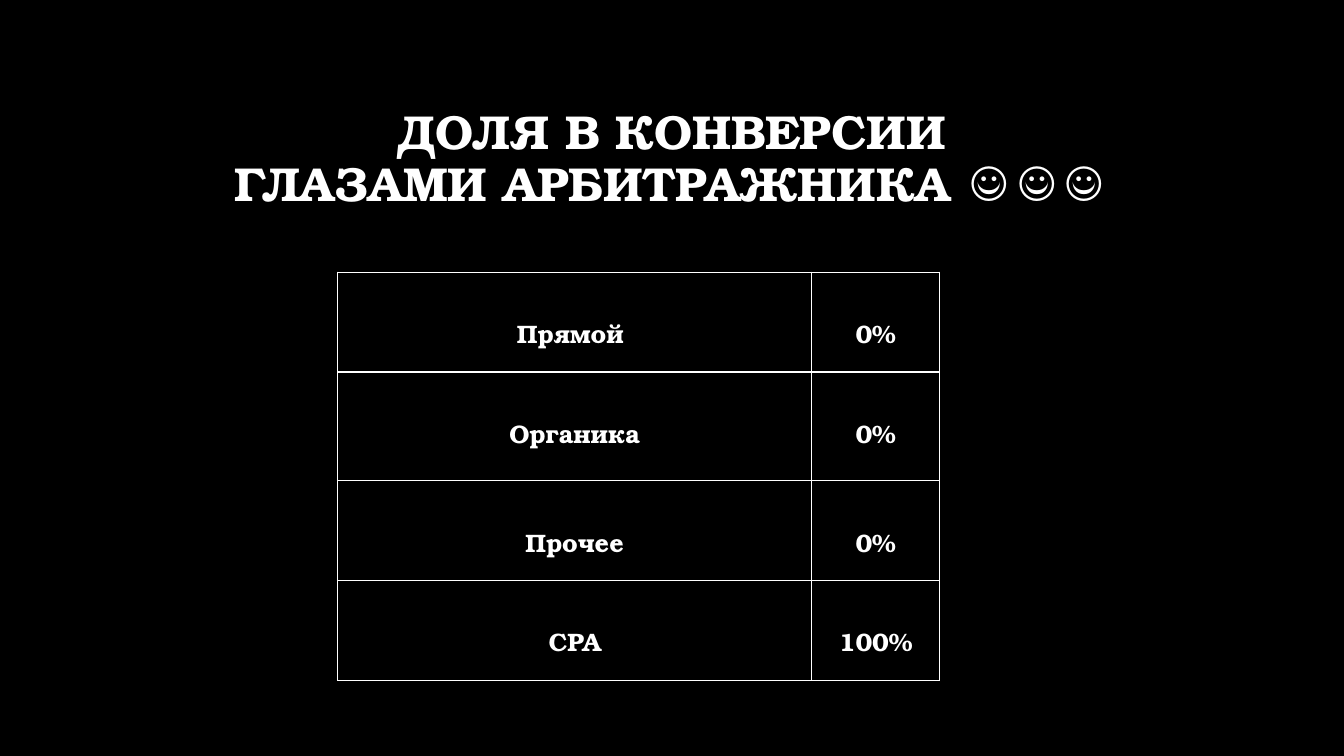
from lxml import etree
from pptx import Presentation
from pptx.dml.color import RGBColor
from pptx.enum.text import MSO_ANCHOR, MSO_AUTO_SIZE, PP_ALIGN
from pptx.oxml.ns import qn
from pptx.util import Inches, Pt

COLORS = {"background": "000000", "text": "FFFFFF", "border": "FFFFFF"}
FONT = "TeX Gyre Bonum"
TITLE = "ДОЛЯ В КОНВЕРСИИ\vГЛАЗАМИ АРБИТРАЖНИКА ☺☺☺"
SHARES = [("Прямой ", "0%"), ("Органика", "0%"), ("Прочее", "0%"), ("CPA", "100%")]
COL_WIDTHS = [4.7, 1.27]
ROW_HEIGHTS = [0.99, 1.08, 0.99, 0.99]


def rgb(name):
    return RGBColor.from_string(COLORS[name])


def style_paragraph(p, size):
    p.alignment = PP_ALIGN.CENTER
    p.font.name = FONT
    p.font.size = Pt(size)
    p.font.bold = True
    p.font.color.rgb = rgb("text")


def add_title(s):
    sp = s.shapes.title
    sp.left, sp.top = Inches(1.34), Inches(0.72)
    sp.width, sp.height = Inches(10.64), Inches(1.43)
    tf = sp.text_frame
    tf.text = TITLE
    tf.word_wrap = True
    tf.auto_size = MSO_AUTO_SIZE.NONE
    tf.vertical_anchor = MSO_ANCHOR.BOTTOM
    p = tf.paragraphs[0]
    style_paragraph(p, 34)
    p.line_spacing = 0.9


def set_borders(cell):
    tc_pr = cell._tc.get_or_add_tcPr()
    for i, side in enumerate(("a:lnL", "a:lnR", "a:lnT", "a:lnB")):
        ln = etree.Element(qn(side), w=str(Pt(1)))
        fill = etree.SubElement(ln, qn("a:solidFill"))
        etree.SubElement(fill, qn("a:srgbClr"), val=COLORS["border"])
        tc_pr.insert(i, ln)


def fill_cell(cell, text):
    cell.text = text
    cell.margin_top = Inches(0.42)
    cell.fill.solid()
    cell.fill.fore_color.rgb = rgb("background")
    style_paragraph(cell.text_frame.paragraphs[0], 18)
    set_borders(cell)


def add_share_table(s):
    table = s.shapes.add_table(
        len(SHARES), len(COL_WIDTHS), Inches(3.35), Inches(2.7),
        Inches(sum(COL_WIDTHS)), Inches(sum(ROW_HEIGHTS))).table
    table.first_row = table.horz_banding = False
    for col, width in zip(table.columns, COL_WIDTHS):
        col.width = Inches(width)
    for row, height, texts in zip(table.rows, ROW_HEIGHTS, SHARES):
        row.height = Inches(height)
        for cell, text in zip(row.cells, texts):
            fill_cell(cell, text)


def main():
    prs = Presentation()
    prs.slide_width, prs.slide_height = Inches(13.33), Inches(7.5)
    s = prs.slides.add_slide(prs.slide_layouts[5])
    s.background.fill.solid()
    s.background.fill.fore_color.rgb = rgb("background")
    add_title(s)
    add_share_table(s)
    prs.save("out.pptx")


if __name__ == "__main__":
    main()
